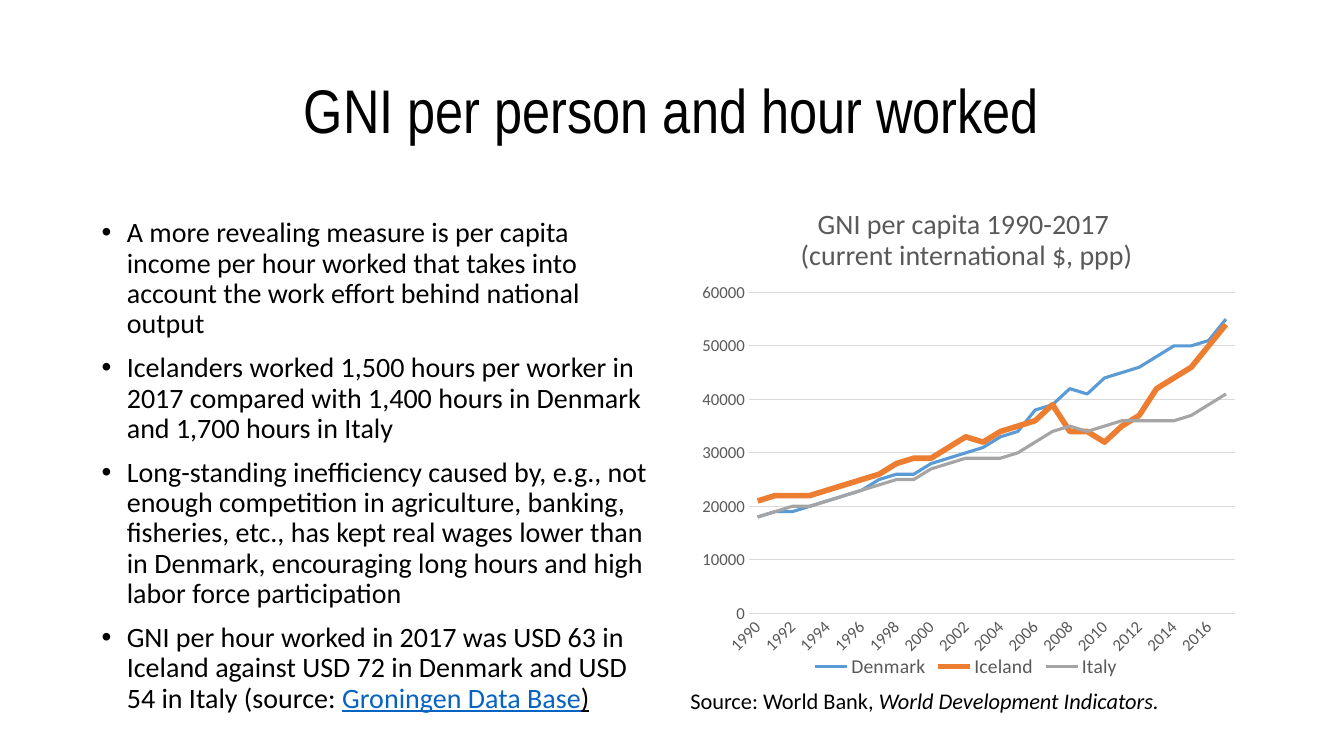
from dataclasses import dataclass, field

from pptx import Presentation
from pptx.chart.chart import Chart
from pptx.chart.data import CategoryChartData
from pptx.dml.color import RGBColor
from pptx.enum.chart import XL_CHART_TYPE as ChartType
from pptx.enum.chart import XL_LEGEND_POSITION as LegendPosition
from pptx.enum.chart import XL_TICK_MARK as TickMark
from pptx.enum.text import MSO_ANCHOR as Anchor
from pptx.enum.text import MSO_AUTO_SIZE as AutoSize
from pptx.enum.text import PP_ALIGN as Align
from pptx.oxml import parse_xml
from pptx.oxml.ns import nsdecls, qn
from pptx.slide import Slide
from pptx.text.text import Font
from pptx.util import Pt

BLACK = RGBColor(0x00, 0x00, 0x00)
GRAY = RGBColor(0x59, 0x59, 0x59)
GRID = RGBColor(0xD9, 0xD9, 0xD9)
LINK = RGBColor(0x05, 0x63, 0xC1)
BLUE = RGBColor(0x5B, 0x9B, 0xD5)
ORANGE = RGBColor(0xED, 0x7D, 0x31)
SILVER = RGBColor(0xA5, 0xA5, 0xA5)


@dataclass
class Run:
    text: str
    format: dict = field(default_factory=dict)


@dataclass
class TextBlock:
    box: tuple[float, float, float, float]
    paragraphs: list[list[Run]]
    size: float
    color: RGBColor = BLACK
    frame: dict = field(default_factory=dict)
    paragraph: dict = field(default_factory=dict)
    bullet: bool = False


@dataclass
class Country:
    name: str
    color: RGBColor
    width: float
    thousands: list[int]


YEARS = range(1990, 2018)
COUNTRIES = [
    Country("Denmark", BLUE, 2.25,
            [18, 19, 19, 20, 21, 22, 23, 25, 26, 26, 28, 29, 30, 31,
             33, 34, 38, 39, 42, 41, 44, 45, 46, 48, 50, 50, 51, 55]),
    Country("Iceland", ORANGE, 4,
            [21, 22, 22, 22, 23, 24, 25, 26, 28, 29, 29, 31, 33, 32,
             34, 35, 36, 39, 34, 34, 32, 35, 37, 42, 44, 46, 50, 54]),
    Country("Italy", SILVER, 2.25,
            [18, 19, 20, 20, 21, 22, 23, 24, 25, 25, 27, 28, 29, 29,
             29, 30, 32, 34, 35, 34, 35, 36, 36, 36, 36, 37, 39, 41]),
]

SPACING = {"line_spacing": 0.9, "space_before": Pt(10)}
TEXT_BLOCKS = [
    # Findings on the left
    TextBlock((65.5, 152.6, 406, 342), [
        [Run("A more revealing measure is per capita income per hour worked that "
             "takes into account the work effort behind national output")],
        [Run("Icelanders worked 1,500 hours per worker in 2017 compared with "
             "1,400 hours in Denmark and 1,700 hours in Italy")],
        [Run("Long-standing inefficiency caused by, e.g., not enough competition in "
             "agriculture, banking, fisheries, etc., has kept real wages lower than in "
             "Denmark, encouraging long hours and high labor force participation")],
        [Run("GNI per hour worked in 2017 was USD 63 in Iceland against USD 72 in "
             "Denmark and USD 54 in Italy (source: "),
         Run("Groningen Data Base", {"underline": True, "color": LINK}),
         Run(")", {"underline": True})],
    ], 20, paragraph=SPACING, bullet=True),
    # Heading above the chart
    TextBlock((458, 132.5, 465, 64.8),
              [[Run("GNI per capita 1990-2017 \v(current international $, ppp)")]],
              20, GRAY, {"vertical_anchor": Anchor.BOTTOM},
              {"alignment": Align.CENTER, **SPACING}),
    # Source below the chart
    TextBlock((486, 487.4, 435.6, 26.6),
              [[Run("Source: World Bank, "),
                Run("World Development Indicators.", {"italic": True})]], 16),
]


def set_all(target: object, values: dict) -> None:
    for name, value in values.items():
        setattr(target, name, value)


def format_font(font: Font, size: float, color: RGBColor, name: str = "Calibri") -> None:
    set_all(font, {"size": Pt(size), "name": name})
    font.color.rgb = color


def add_title(slide: Slide, text: str) -> None:
    title = slide.shapes.title
    set_all(title, {"left": Pt(66), "top": Pt(28.8), "width": Pt(828), "height": Pt(104.4)})
    set_all(title.text_frame, {"text": text, "auto_size": AutoSize.NONE,
                               "vertical_anchor": Anchor.MIDDLE, "word_wrap": True})
    paragraph = title.text_frame.paragraphs[0]
    set_all(paragraph, {"alignment": Align.CENTER, "line_spacing": 0.9})
    format_font(paragraph.runs[0].font, 44, BLACK, "Arial Narrow")


def add_text(slide: Slide, block: TextBlock) -> None:
    frame = slide.shapes.add_textbox(*map(Pt, block.box)).text_frame
    set_all(frame, {"word_wrap": True, **block.frame})
    for index, runs in enumerate(block.paragraphs):
        paragraph = frame.add_paragraph() if index else frame.paragraphs[0]
        set_all(paragraph, block.paragraph)
        if block.bullet:
            properties = paragraph._p.get_or_add_pPr()
            properties.set("marL", str(Pt(18)))
            properties.set("indent", str(-Pt(18)))
            for xml in (f'<a:buFont {nsdecls("a")} typeface="Arial"/>',
                        f'<a:buChar {nsdecls("a")} char="•"/>'):
                properties.append(parse_xml(xml))
        for item in runs:
            for index_line, line in enumerate(item.text.split("\v")):
                if index_line:
                    paragraph.add_line_break()
                run = paragraph.add_run()
                run.text = line
                values = dict(item.format)
                format_font(run.font, block.size, values.pop("color", block.color))
                set_all(run.font, values)


def layout_xml(x: float, y: float, width: float, height: float, inner: bool = False):
    target = '<c:layoutTarget val="inner"/>' if inner else ""
    return parse_xml(
        f'<c:layout {nsdecls("c")}><c:manualLayout>{target}'
        '<c:xMode val="edge"/><c:yMode val="edge"/>'
        f'<c:x val="{x}"/><c:y val="{y}"/><c:w val="{width}"/><c:h val="{height}"/>'
        '</c:manualLayout></c:layout>')


def format_axes(chart: Chart) -> None:
    for axis in (chart.category_axis, chart.value_axis):
        set_all(axis, {"major_tick_mark": TickMark.NONE, "minor_tick_mark": TickMark.NONE})
        format_font(axis.tick_labels.font, 12, GRAY)
    years, values = chart.category_axis, chart.value_axis
    set_all(values, {"minimum_scale": 0, "maximum_scale": 60000, "major_unit": 10000,
                     "has_major_gridlines": True})
    values.format.line.fill.background()
    for line in (years.format.line, values.major_gridlines.format.line):
        line.color.rgb = GRID
        line.width = Pt(0.75)
    # Slanted labels for every second year
    years._element.find(qn("c:txPr")).find(qn("a:bodyPr")).set("rot", "-2700000")
    skip = parse_xml(f'<c:tickLblSkip {nsdecls("c")} val="2"/>')
    years._element.find(qn("c:noMultiLvlLbl")).addprevious(skip)


def add_income_chart(slide: Slide) -> None:
    data = CategoryChartData(number_format="General")
    data.categories = [str(year) for year in YEARS]
    for country in COUNTRIES:
        data.add_series(country.name, [value * 1000 for value in country.thousands])
    chart = slide.shapes.add_chart(ChartType.LINE, Pt(486), Pt(197.3), Pt(408.2),
                                   Pt(290.2), data).chart
    set_all(chart, {"has_title": False, "has_legend": True})
    format_font(chart.font, 10, BLACK)
    chart.plots[0].vary_by_categories = False
    for country, series in zip(COUNTRIES, chart.plots[0].series):
        series.smooth = False
        series.format.line.color.rgb = country.color
        series.format.line.width = Pt(country.width)
    format_axes(chart)

    # Legend inside the plot, lower right
    legend = chart.legend
    set_all(legend, {"position": LegendPosition.BOTTOM, "include_in_layout": False})
    format_font(legend.font, 14, GRAY)
    legend._element.find(qn("c:legendPos")).addnext(layout_xml(0.72, 0.6, 0.23, 0.22))
    plot_area = chart._chartSpace.chart.plotArea
    for old in plot_area.findall(qn("c:layout")):
        plot_area.remove(old)
    plot_area.insert(0, layout_xml(0.12, 0.04, 0.85, 0.79, inner=True))


def main() -> None:
    presentation = Presentation()
    set_all(presentation, {"slide_width": Pt(960), "slide_height": Pt(540)})
    slide = presentation.slides.add_slide(presentation.slide_layouts[5])
    add_title(slide, "GNI per person and hour worked")
    for block in TEXT_BLOCKS:
        add_text(slide, block)
    add_income_chart(slide)
    presentation.save("out.pptx")


if __name__ == "__main__":
    main()
